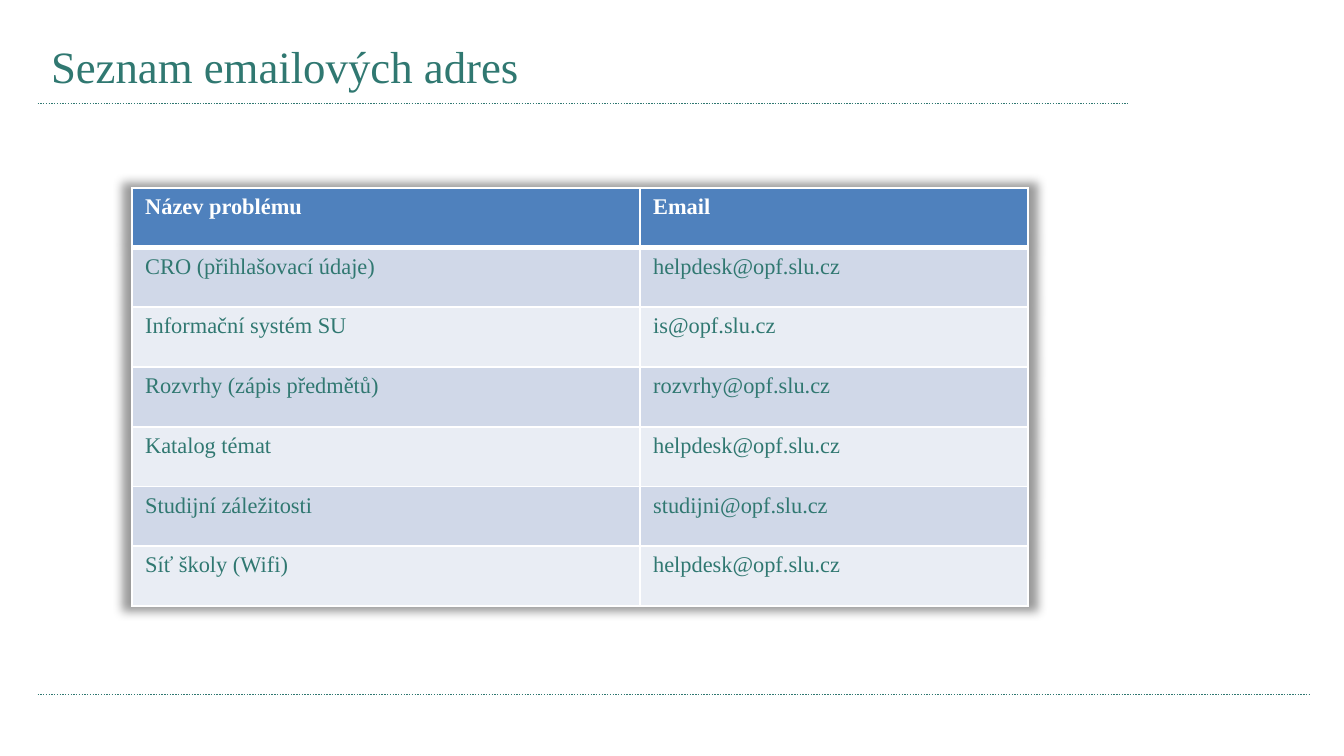
from lxml.etree import SubElement
from pptx import Presentation
from pptx.dml.color import RGBColor
from pptx.enum.dml import MSO_LINE
from pptx.enum.shapes import MSO_CONNECTOR
from pptx.enum.text import MSO_ANCHOR, PP_ALIGN
from pptx.oxml import parse_xml
from pptx.oxml.ns import nsdecls, qn
from pptx.util import Cm, Pt

# Content
HEADING = "Seznam emailových adres"
CONTACTS = [
    ("Název problému", "Email"),
    ("CRO (přihlašovací údaje)", "helpdesk@opf.slu.cz"),
    ("Informační systém SU", "is@opf.slu.cz"),
    ("Rozvrhy (zápis předmětů)", "rozvrhy@opf.slu.cz"),
    ("Katalog témat", "helpdesk@opf.slu.cz"),
    ("Studijní záležitosti", "studijni@opf.slu.cz"),
    ("Síť školy (Wifi)", "helpdesk@opf.slu.cz"),
]

# Style and layout, lengths in cm
FONT = "Times New Roman"
COLORS = {"teal": "307871", "white": "FFFFFF", "header": "4F81BD",
          "odd": "D0D8E8", "even": "E9EDF4"}
MARGIN = 0.71
RULES = [(1.96, 21.31), (13.13, 24.77)]  # height on slide, right end
TABLE_LEFT, TABLE_TOP = 2.49, 3.55
COLUMN_WIDTHS = (9.6, 7.34)
ROW_HEIGHT = 1.13


def color(name):
    return RGBColor.from_string(COLORS[name])


def write(frame, text, size, color_name, bold=False):
    run = frame.paragraphs[0].add_run()
    run.text = text
    run.font.name = FONT
    run.font.size = Pt(size)
    run.font.bold = bold
    run.font.color.rgb = color(color_name)


def add_borders(cell, top, bottom):
    properties = cell._tc.get_or_add_tcPr()
    for side, width in (("L", 1), ("R", 1), ("T", top), ("B", bottom)):
        border = SubElement(properties, qn(f"a:ln{side}"), w=str(Pt(width)))
        fill = SubElement(border, qn("a:solidFill"))
        SubElement(fill, qn("a:srgbClr"), val=COLORS["white"])


prs = Presentation()
prs.slide_width, prs.slide_height = Cm(25.4), Cm(14.29)
slide = prs.slides.add_slide(prs.slide_layouts[5])

# Dotted rules
for y, right in RULES:
    rule = slide.shapes.add_connector(
        MSO_CONNECTOR.STRAIGHT, Cm(MARGIN), Cm(y), Cm(right), Cm(y))
    rule.line.color.rgb = color("teal")
    rule.line.width = Pt(0.75)
    rule.line.dash_style = MSO_LINE.ROUND_DOT
    SubElement(rule._element.spPr, qn("a:effectLst"))

# Title
title = slide.shapes.title
title.left, title.top = Cm(MARGIN), Cm(0.53)
title.width, title.height = Cm(12.6), Cm(1.43)
title.text_frame.vertical_anchor = MSO_ANCHOR.MIDDLE
title.text_frame.paragraphs[0].alignment = PP_ALIGN.LEFT
write(title.text_frame, HEADING, 24, "teal")

# Contact table
table = slide.shapes.add_table(
    len(CONTACTS), len(COLUMN_WIDTHS), Cm(TABLE_LEFT), Cm(TABLE_TOP),
    Cm(sum(COLUMN_WIDTHS)), Cm(ROW_HEIGHT * len(CONTACTS))).table
for column, width in zip(table.columns, COLUMN_WIDTHS):
    column.width = Cm(width)
for r, contact in enumerate(CONTACTS):
    table.rows[r].height = Cm(ROW_HEIGHT)
    header = r == 0
    band = "header" if header else ("odd" if r % 2 else "even")
    for c, text in enumerate(contact):
        cell = table.cell(r, c)
        add_borders(cell, top=3 if r == 1 else 1, bottom=3 if header else 1)
        cell.fill.solid()
        cell.fill.fore_color.rgb = color(band)
        write(cell.text_frame, text, 12, "white" if header else "teal", header)

# Soft shadow around the table
table._tbl.tblPr.insert(0, parse_xml(
    f'<a:effectLst {nsdecls("a")}>'
    '<a:outerShdw blurRad="63500" sx="102000" sy="102000" algn="ctr" rotWithShape="0">'
    '<a:srgbClr val="000000"><a:alpha val="40000"/></a:srgbClr>'
    '</a:outerShdw></a:effectLst>'))

prs.save("out.pptx")
